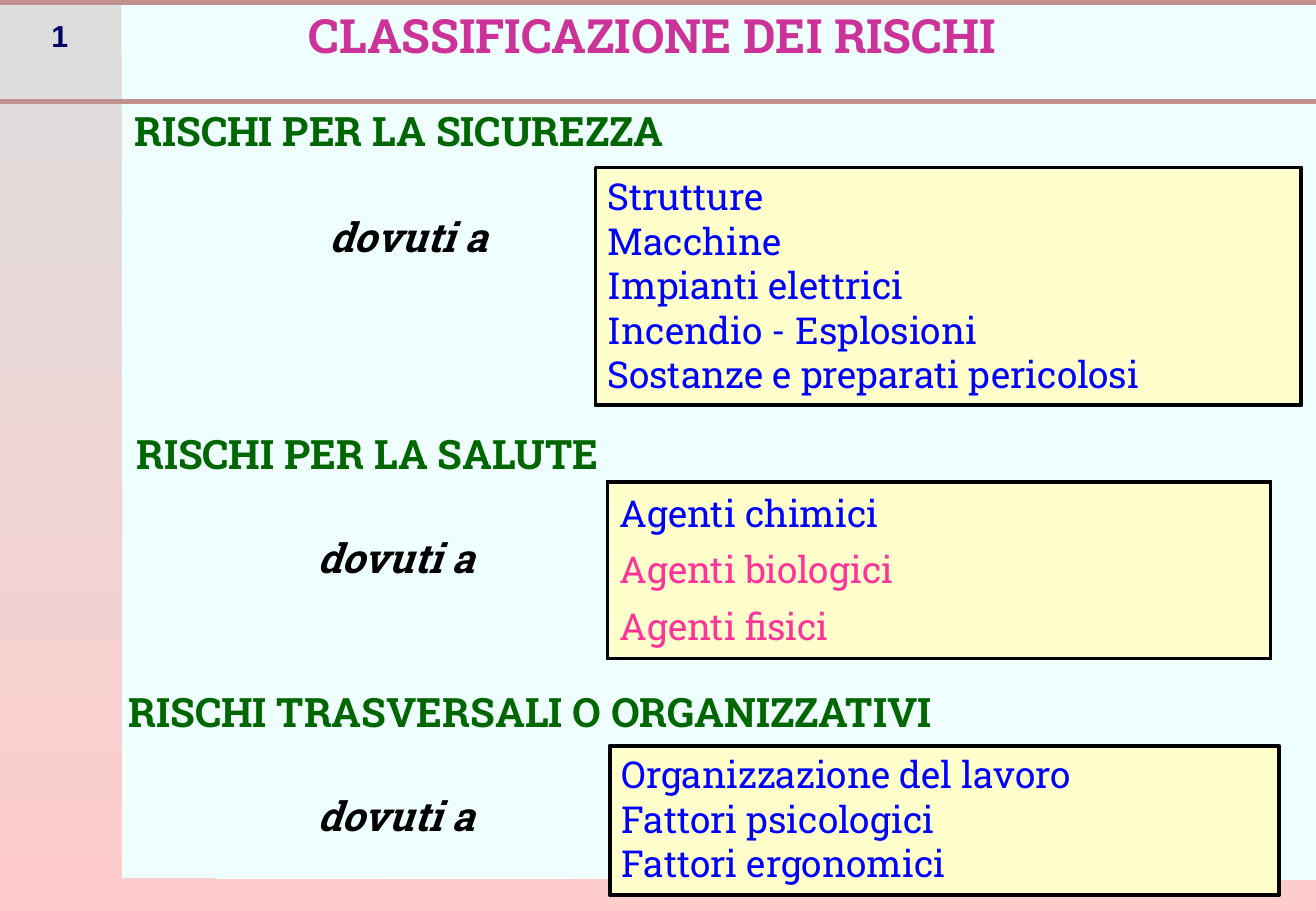
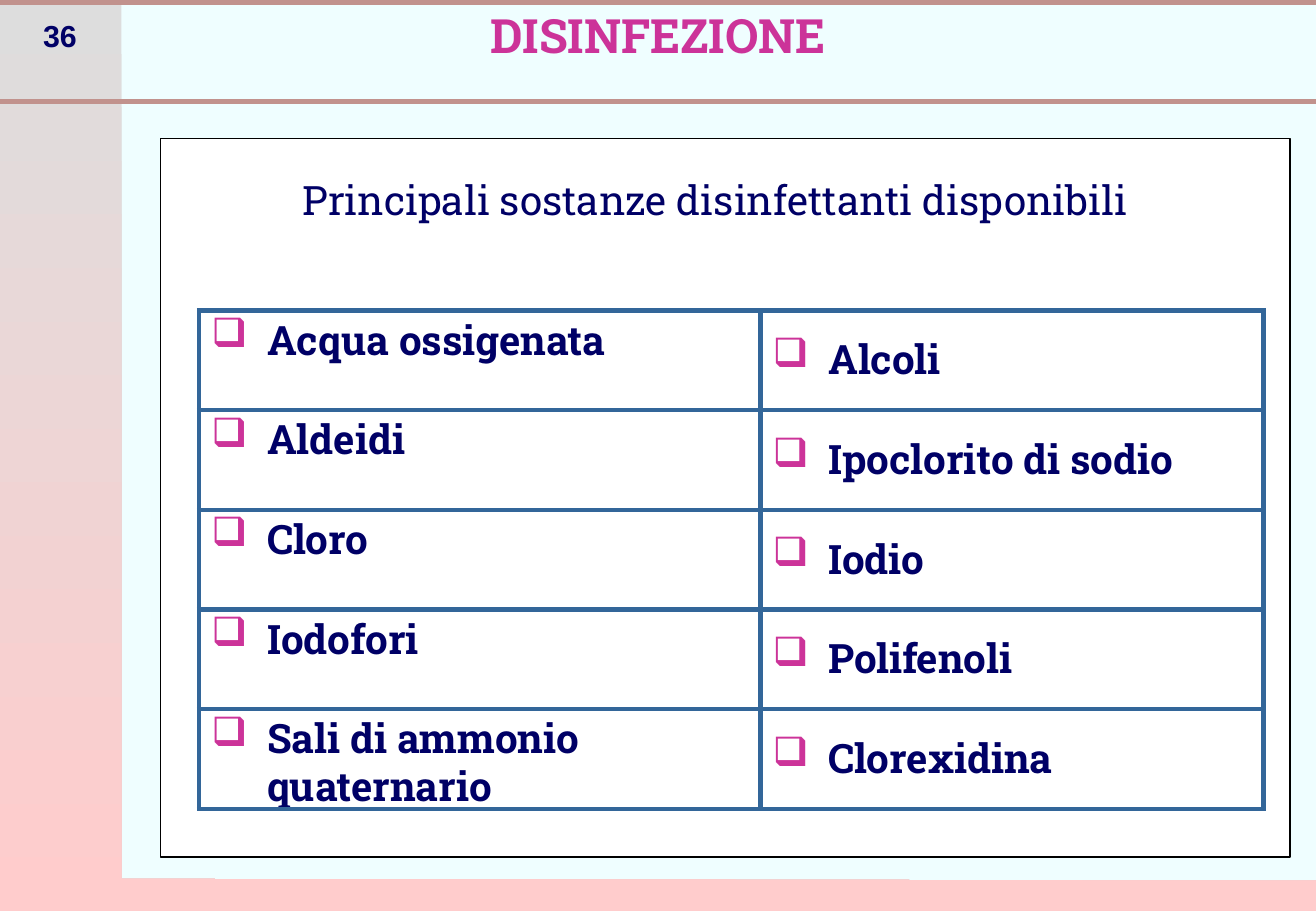
from lxml.etree import SubElement
from pptx import Presentation
from pptx.dml.color import RGBColor
from pptx.enum.shapes import MSO_CONNECTOR as Connector, MSO_SHAPE as Preset
from pptx.enum.text import MSO_ANCHOR as Anchor, PP_ALIGN as Align
from pptx.oxml.ns import qn
from pptx.util import Pt

rgb = RGBColor.from_string
SLAB = "Roboto Slab"
NAVY, MAGENTA, BLUE, PINK, CREAM, BLACK = "000066", "CC3399", "0000FF", "FF3399", "FFFFCC", "000000"
FORMATS = {
    "number": ({"name": "Arial", "size": Pt(18), "bold": True}, NAVY, Align.CENTER),
    "title": ({"name": SLAB, "size": Pt(28), "bold": True}, MAGENTA, Align.CENTER),
    "heading": ({"name": SLAB, "size": Pt(24), "bold": True}, "006600", Align.LEFT),
    "cause": ({"name": SLAB, "size": Pt(24), "bold": True, "italic": True}, BLACK, Align.RIGHT),
    "item": ({"name": SLAB, "size": Pt(22)}, BLUE, Align.LEFT),
    "pink item": ({"name": SLAB, "size": Pt(22)}, PINK, Align.LEFT),
    "caption": ({"name": SLAB, "size": Pt(24)}, NAVY, Align.CENTER),
    "substance": ({"name": SLAB, "size": Pt(24), "bold": True}, NAVY, Align.LEFT),
}


def write(frame, lines, style):
    values, color, alignment = FORMATS[style]
    frame.word_wrap = True
    for index, line in enumerate(lines):
        paragraph = frame.add_paragraph() if index else frame.paragraphs[0]
        paragraph.alignment = alignment
        run = paragraph.add_run()
        run.text = line
        for name, value in values.items():
            setattr(run.font, name, value)
        run.font.color.rgb = rgb(color)


def set_borders(cell, color, widths):
    properties = cell._tc.get_or_add_tcPr()
    for edge in "LRTB":
        width = widths.get(edge, 0)
        line = SubElement(properties, qn(f"a:ln{edge}"), w=str(Pt(width)))
        if width:
            fill = SubElement(line, qn("a:solidFill"))
            SubElement(fill, qn("a:srgbClr"), val=color)
        else:
            SubElement(line, qn("a:noFill"))


presentation = Presentation()
presentation.slide_width, presentation.slide_height = Pt(780), Pt(540)

slides = []
for number, title in [("1", "CLASSIFICAZIONE DEI RISCHI "), ("36", "DISINFEZIONE")]:
    slide = presentation.slides.add_slide(presentation.slide_layouts[6])
    slides.append(slide)
    slide.background.fill.solid()
    slide.background.fill.fore_color.rgb = rgb("EFFEFF")

    outline = slide.shapes.build_freeform(0, 540, scale=Pt(1))
    outline.add_line_segments([(0, 0), (72.5, 0), (72, 521), (780, 522), (780, 540)])
    band = outline.convert_to_shape()
    band.shadow.inherit = False
    band.line.fill.background()
    band.fill.gradient()
    band.fill.gradient_angle = 270
    for stop, position, color in zip(band.fill.gradient_stops, (0, 1), ("DDDDDD", "FFCCCC")):
        stop.position = position
        stop.color.rgb = rgb(color)

    number_box = slide.shapes.add_textbox(Pt(0), Pt(0), Pt(71), Pt(42))
    number_box.text_frame.vertical_anchor = Anchor.MIDDLE
    for side in ("left", "right", "top", "bottom"):
        setattr(number_box.text_frame, f"margin_{side}", Pt(1))
    write(number_box.text_frame, [number], "number")

    for y in (60.3, 1.4):
        rule = slide.shapes.add_connector(Connector.STRAIGHT, Pt(0), Pt(y), Pt(780), Pt(y))
        rule.line.color.rgb = rgb("C1928D")
        rule.line.width = Pt(3)
        SubElement(rule._element.spPr, qn("a:effectLst"))

    title_box = slide.shapes.add_textbox(Pt(0), Pt(0), Pt(780), Pt(41))
    write(title_box.text_frame, [title], "title")

risks, disinfection = slides

for style, text, left, top, width in [
    ("heading", "RISCHI PER LA SICUREZZA", 72.7, 59.2, 629),
    ("cause", "dovuti a ", 167.8, 121.9, 134),
    ("heading", "RISCHI PER LA SALUTE", 73.7, 250.9, 407),
    ("cause", "dovuti a ", 70.3, 312.6, 224),
    ("heading", "RISCHI TRASVERSALI O ORGANIZZATIVI", 69.1, 404, 705),
    ("cause", "dovuti a ", 70.3, 465.5, 224),
]:
    label = risks.shapes.add_textbox(Pt(left), Pt(top), Pt(width), Pt(36))
    write(label.text_frame, [text], style)

safety = ["Strutture", "Macchine", "Impianti elettrici", "Incendio - Esplosioni",
          "Sostanze e preparati pericolosi"]
organization = ["Organizzazione del lavoro", "Fattori psicologici", "Fattori ergonomici"]
for slide, left, top, width, height, fill, line, lines, style in [
    (risks, 353, 99.3, 418.4, 141, CREAM, 2.25, safety, "item"),
    (risks, 361.4, 442, 396.8, 88.6, CREAM, 2.25, organization, "item"),
    (disinfection, 95, 82.1, 669.6, 426, "FFFFFF", 0.75,
     ["Principali sostanze disinfettanti disponibili"], "caption"),
]:
    box = slide.shapes.add_shape(Preset.RECTANGLE, Pt(left), Pt(top), Pt(width), Pt(height))
    box.shadow.inherit = False
    box.fill.solid()
    box.fill.fore_color.rgb = rgb(fill)
    box.line.color.rgb = rgb(BLACK)
    box.line.width = Pt(line)
    box.text_frame.vertical_anchor = Anchor.TOP
    write(box.text_frame, lines, style)
box.text_frame.margin_top = Pt(25)
box.text_frame.margin_right = Pt(19)
box.text_frame.paragraphs[0].line_spacing = 0.9

agents = [("Agenti chimici", "item"), ("Agenti biologici", "pink item"), ("Agenti fisici", "pink item")]
substances = [
    ("Acqua ossigenata", "Alcoli"),
    ("Aldeidi", "Ipoclorito di sodio"),
    ("Cloro", "Iodio"),
    ("Iodofori", "Polifenoli"),
    ("Sali di ammonio quaternario", "Clorexidina"),
]
tables = []
for slide, left, top, widths, heights in [
    (risks, 360, 285.8, (229.7, 163.4), (33.5, 33.5, 37.5)),
    (disinfection, 118.1, 184.1, (332.6, 298.1), [59.1] * len(substances)),
]:
    table = slide.shapes.add_table(len(heights), 2, Pt(left), Pt(top), Pt(sum(widths)), Pt(sum(heights))).table
    table.first_row = table.horz_banding = False
    for column, width in zip(table.columns, widths):
        column.width = Pt(width)
    for row, height in zip(table.rows, heights):
        row.height = Pt(height)
    tables.append(table)
agent_table, substance_table = tables

for row, (text, style) in enumerate(agents):
    for column, side in enumerate("LR"):
        cell = agent_table.cell(row, column)
        edges = side + {0: "T", len(agents) - 1: "B"}.get(row, "")
        set_borders(cell, BLACK, dict.fromkeys(edges, 2.25))
        cell.fill.solid()
        cell.fill.fore_color.rgb = rgb(CREAM)
    write(agent_table.cell(row, 0).text_frame, [text], style)

for row, names in enumerate(substances):
    for column, name in enumerate(names):
        cell = substance_table.cell(row, column)
        set_borders(cell, "336699", dict.fromkeys("LRTB", 3))
        cell.fill.background()
        cell.vertical_anchor = Anchor.MIDDLE if column else Anchor.TOP
        write(cell.text_frame, [name], "substance")
        paragraph = cell.text_frame.paragraphs[0]
        paragraph.line_spacing = 0.9
        properties = paragraph._p.get_or_add_pPr()
        properties.set("marL", str(Pt(33)))
        properties.set("indent", str(-Pt(33)))
        bullet_color = SubElement(properties, qn("a:buClr"))
        SubElement(bullet_color, qn("a:srgbClr"), val=MAGENTA)
        SubElement(properties, qn("a:buChar"), char="❑")

presentation.save("out.pptx")
